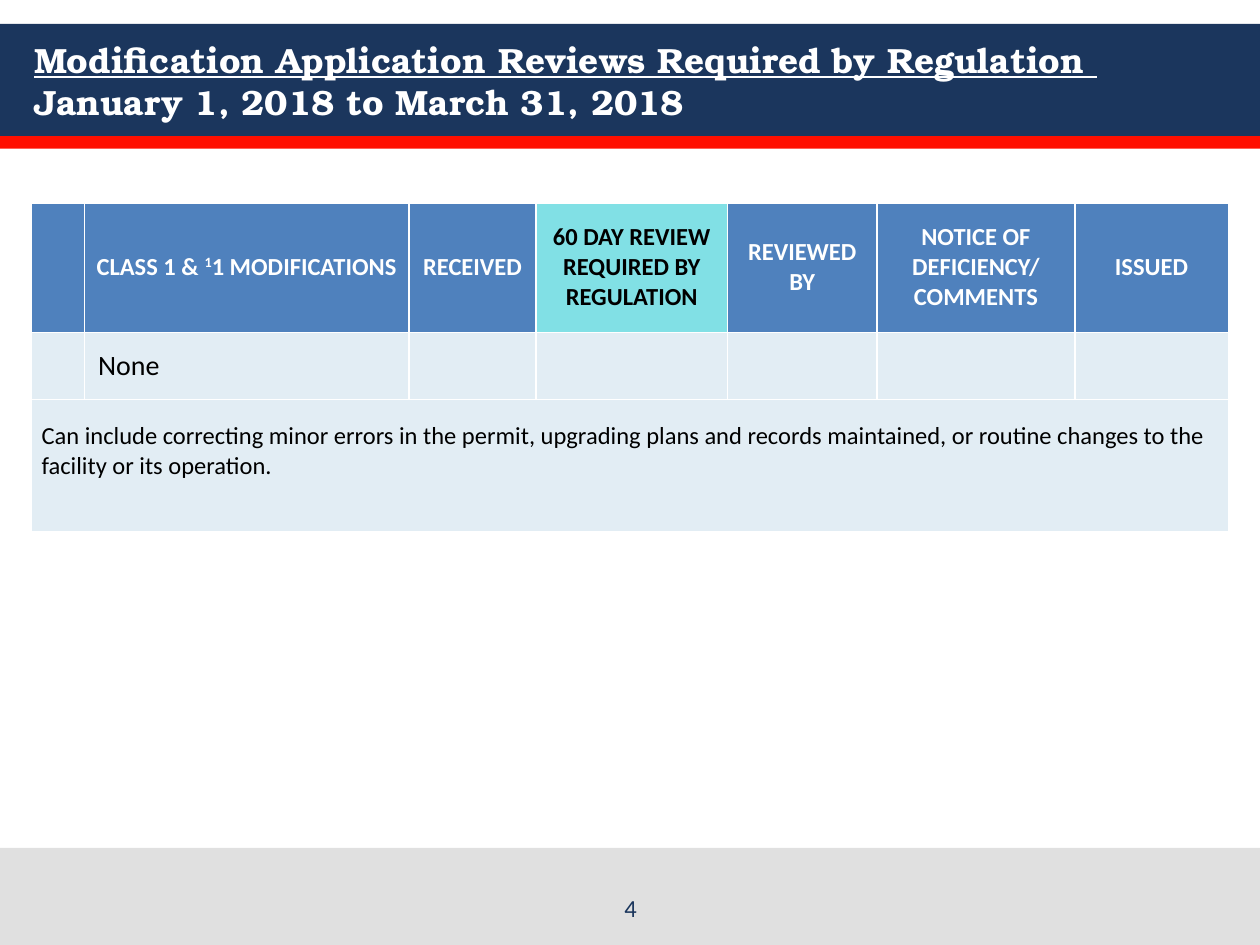
from lxml.etree import SubElement
from pptx import Presentation
from pptx.dml.color import RGBColor
from pptx.enum.shapes import MSO_SHAPE
from pptx.enum.text import MSO_ANCHOR, PP_ALIGN
from pptx.oxml.ns import qn
from pptx.util import Inches, Pt

WIDE, HIGH = Inches(10), Inches(7.5)
WHITE = RGBColor(0xFF, 0xFF, 0xFF)
BLACK = RGBColor(0, 0, 0)
NAVY = RGBColor(0x1B, 0x36, 0x5D)
RED = RGBColor(0xFF, 0x0F, 0x00)
GREY = RGBColor(0xE0, 0xE0, 0xE0)
BLUE = RGBColor(0x4F, 0x81, 0xBD)
AQUA = RGBColor(0x81, 0xE0, 0xE5)
PALE = RGBColor(0xE2, 0xED, 0xF4)

COLS = [0.42, 2.58, 1.01, 1.52, 1.19, 1.57, 1.22]
ROWS = [1.05, 0.54, 1.06]
HEADS = ["", "CLASS 1 & 11 MODIFICATIONS", "RECEIVED",
         "60 DAY REVIEW\nREQUIRED BY\nREGULATION", "REVIEWED BY",
         "NOTICE OF DEFICIENCY/ COMMENTS", "ISSUED"]
NOTE = ("Can include correcting minor errors in the permit, upgrading plans "
        "and records maintained, or routine changes to the facility or its "
        "operation.")


def area(left, top, width, height):
    """Turn percentages of the slide into a box of lengths."""
    return (int(WIDE * left / 100), int(HIGH * top / 100),
            int(WIDE * width / 100), int(HIGH * height / 100))


def style(run, size, color, bold=False, face="Calibri"):
    font = run.font
    font.name, font.size, font.bold = face, Pt(size), bold
    font.color.rgb = color


def add_band(slide, box, color):
    band = slide.shapes.add_shape(MSO_SHAPE.RECTANGLE, *box)
    band.shadow.inherit = False
    band.fill.solid()
    band.fill.fore_color.rgb = color
    band.line.fill.background()


def set_title(slide, box):
    title = slide.shapes.title
    title.element.getparent().append(title.element)  # in front of the bands
    title.left, title.top, title.width, title.height = box
    frame = title.text_frame
    frame.vertical_anchor = MSO_ANCHOR.MIDDLE
    frame.text = ("Modification Application Reviews Required by Regulation \v"
                  "January 1, 2018 to March 31, 2018")
    para = frame.paragraphs[0]
    para.alignment = PP_ALIGN.LEFT
    for run, under in zip(para.runs, (True, False)):
        style(run, 20, WHITE, True, "TeX Gyre Bonum")
        run.font.underline = under


def rule_cell(cell, top):
    """Draw white borders, the upper one as thick as given."""
    props = cell._tc.get_or_add_tcPr()
    for side, width in zip("LRTB", (1, 1, top, 1)):
        line = SubElement(props, qn(f"a:ln{side}"), w=str(Pt(width)))
        fill = SubElement(line, qn("a:solidFill"))
        SubElement(fill, qn("a:srgbClr"), val=str(WHITE))


def paint(cell, color, top=1):
    rule_cell(cell, top)
    cell.fill.solid()
    cell.fill.fore_color.rgb = color


def write(cell, text, size, color, bold=False, align=PP_ALIGN.LEFT,
          left=0.08, base=0):
    cell.vertical_anchor = MSO_ANCHOR.MIDDLE
    cell.margin_left, cell.margin_right = Inches(left), Inches(0.08)
    cell.margin_top, cell.margin_bottom = 0, Inches(base)
    cell.text_frame.text = text
    for para in cell.text_frame.paragraphs:
        para.alignment = align
        for run in para.runs:
            style(run, size, color, bold)


def raise_mark(cell):
    """Split the class heading so that its first 1 after & is raised."""
    para = cell.text_frame.paragraphs[0]
    para.runs[0].text = "CLASS 1 & "
    for text in ("1", "1 MODIFICATIONS"):
        style_run = para.add_run()
        style_run.text = text
        style(style_run, 14, WHITE, True)
    para.runs[1].font._element.set("baseline", "30000")


def add_grid(slide, box):
    table = slide.shapes.add_table(len(ROWS), len(COLS), *box).table
    for col, share in zip(table.columns, COLS):
        col.width = int(box[2] * share / sum(COLS))
    for row, share in zip(table.rows, ROWS):
        row.height = int(box[3] * share / sum(ROWS))

    for index, head in enumerate(HEADS):
        cell = table.cell(0, index)
        key = index == 3
        paint(cell, AQUA if key else BLUE, 3)
        if head:
            write(cell, head, 14, BLACK if key else WHITE, True,
                  PP_ALIGN.CENTER)
        for row in (1, 2):
            paint(table.cell(row, index), PALE)
    raise_mark(table.cell(0, 1))
    write(table.cell(1, 1), "None", 16, BLACK, left=0.11)
    note = table.cell(2, 0)
    note.merge(table.cell(2, len(COLS) - 1))
    write(note, NOTE, 14, BLACK, base=0.23)


def add_number(slide, box):
    frame = slide.shapes.add_textbox(*box).text_frame
    frame.word_wrap = True
    frame.vertical_anchor = MSO_ANCHOR.BOTTOM
    frame.text = "4"
    para = frame.paragraphs[0]
    para.alignment = PP_ALIGN.CENTER
    style(para.runs[0], 14, NAVY)


def main():
    deck = Presentation()
    deck.slide_width, deck.slide_height = WIDE, HIGH
    slide = deck.slides.add_slide(deck.slide_layouts[5])
    add_band(slide, area(0, 2.53, 100, 11.87), NAVY)
    add_band(slide, area(0, 14.4, 100, 1.33), RED)
    add_band(slide, area(0, 89.73, 100, 10.27), GREY)
    set_title(slide, area(1.7, 2.53, 96.7, 12))
    add_grid(slide, area(2.5, 21.3, 95, 35))
    add_number(slide, area(34.2, 92.93, 31.7, 5.33))
    deck.save("out.pptx")


if __name__ == "__main__":
    main()
